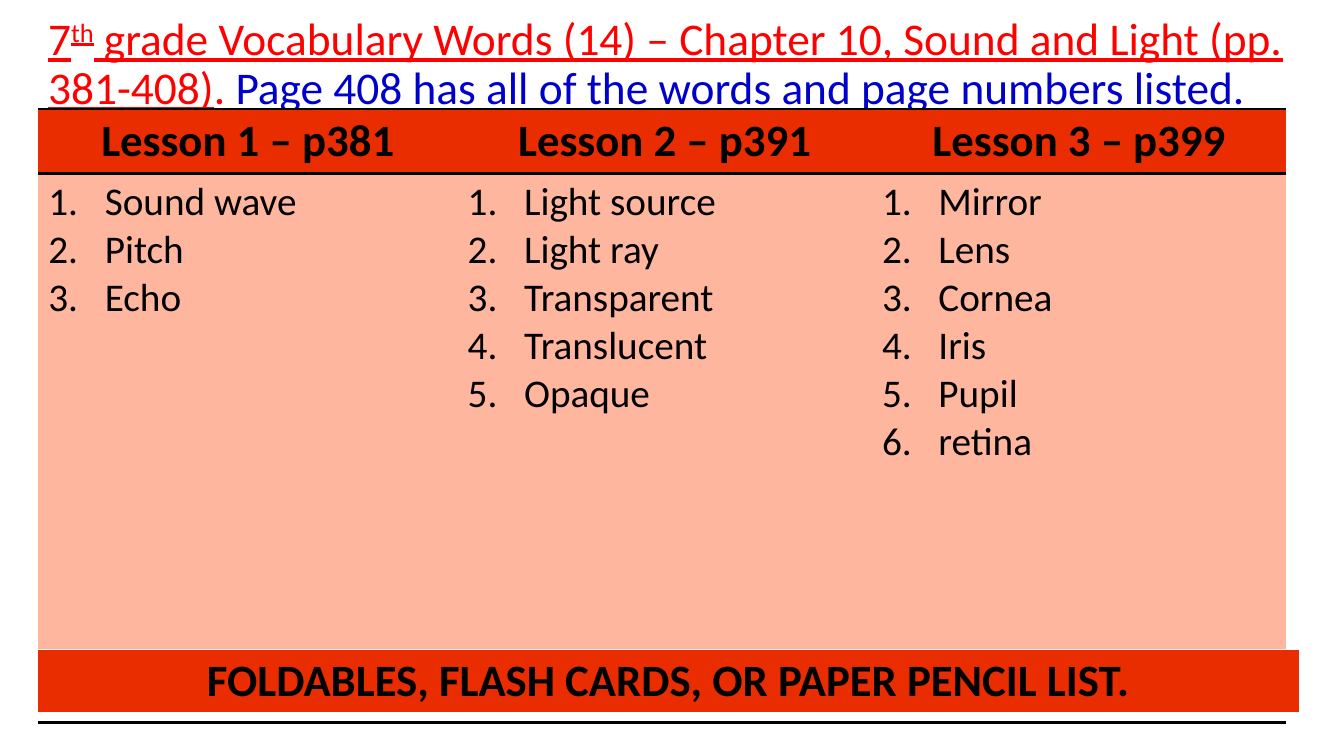
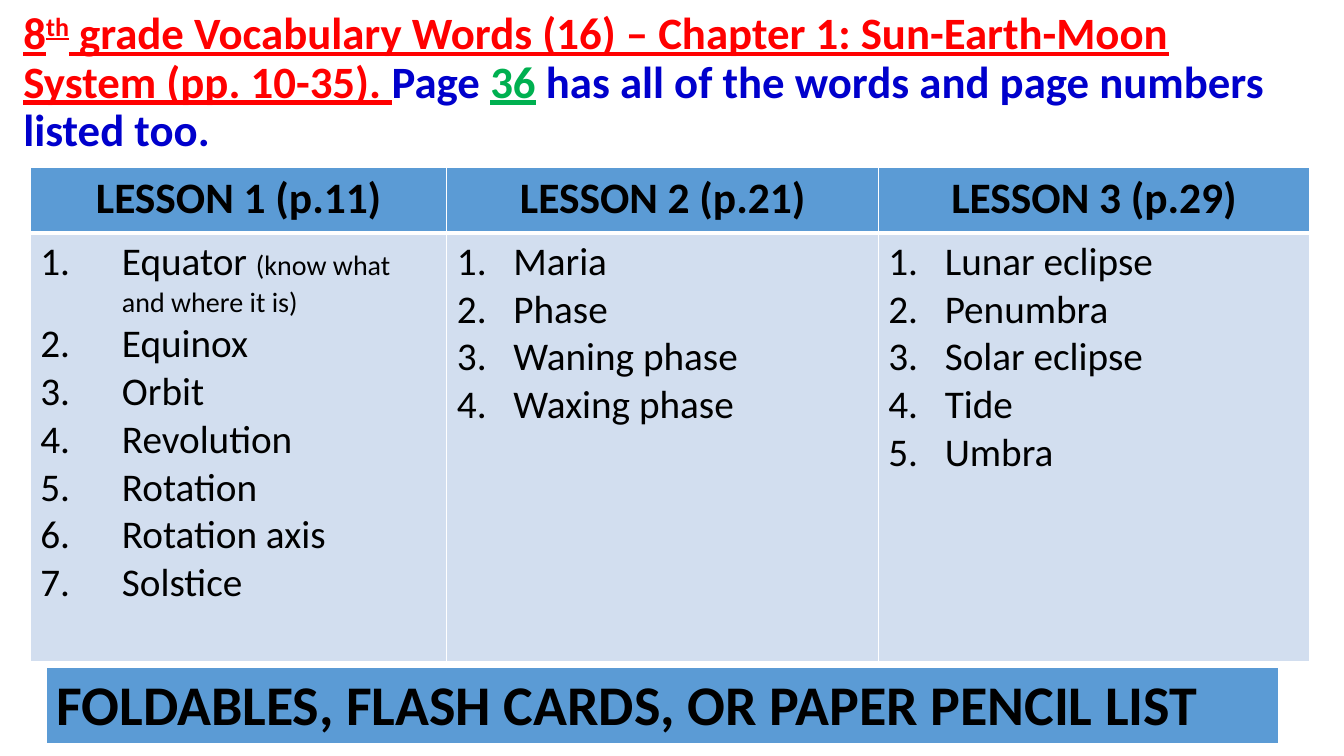
from dataclasses import dataclass

from lxml import etree
from pptx import Presentation
from pptx import util as u
from pptx.dml.color import RGBColor
from pptx.enum import text
from pptx.oxml import ns

WIDTH, HEIGHT = u.Inches(13.33), u.Inches(7.5)


@dataclass(frozen=True)
class Theme:
    font: str = "Calibri"
    ink: str = "000000"
    paper: str = "FFFFFF"
    heading: str = "FF0000"
    remark: str = "0000CC"
    page: str = "00B050"
    orange: str = "EA2D00"
    peach: str = "FFB69F"
    blue: str = "5B9BD5"
    pale_blue: str = "D2DEEF"
    word: float = 28
    hint: float = 20
    header: float = 32
    small_header: float = 31
    large_banner: float = 40
    hang: float = 0.56
    wide_hang: float = 0.81


T = Theme()
BLACK_RULE = (T.ink, 2)
THIN_WHITE = (T.paper, 1)
THICK_WHITE = (T.paper, 3)


def across(percent):
    return round(WIDTH * percent / 100)


def down(percent):
    return round(HEIGHT * percent / 100)


def add_run(p, words, size, color=T.ink, bold=False, underline=False, raised=False):
    r = p.add_run()
    r.text = words
    values = {"name": T.font, "size": u.Pt(size), "bold": bold, "underline": underline}
    for name, value in values.items():
        setattr(r.font, name, value)
    r.font.color.rgb = RGBColor.from_string(color)
    if raised:
        r._r.get_or_add_rPr().set("baseline", "30000")


def add_title(s, box, size, bold, runs):
    x, y, w, h = box
    sp = s.shapes.add_textbox(across(x), down(y), across(w), down(h))
    tf = sp.text_frame
    values = {"word_wrap": True, "vertical_anchor": text.MSO_ANCHOR.MIDDLE}
    for name, value in values.items():
        setattr(tf, name, value)
    p = tf.paragraphs[0]
    p.line_spacing = 0.9
    for words, style in runs:
        add_run(p, words, size, bold=bold, **style)


def set_border(cell, side, line):
    ln = etree.SubElement(cell._tc.get_or_add_tcPr(), ns.qn(f"a:ln{side}"))
    if line is None:
        etree.SubElement(ln, ns.qn("a:noFill"))
        return
    color, width = line
    ln.set("w", str(u.Pt(width)))
    fill = etree.SubElement(ln, ns.qn("a:solidFill"))
    etree.SubElement(fill, ns.qn("a:srgbClr"), val=color)


def add_table(s, corner, widths, heights, fills, rules, sides):
    x, y = corner
    frame = s.shapes.add_table(len(heights), len(widths), across(x), down(y),
                               across(sum(widths)), down(sum(heights)))
    table = frame.table
    table.first_row = table.horz_banding = False
    for column, width in zip(table.columns, widths):
        column.width = across(width)
    for i, (row, height) in enumerate(zip(table.rows, heights)):
        row.height = down(height)
        for cell in row.cells:
            borders = {"L": sides, "R": sides, "T": rules[i], "B": rules[i + 1]}
            for side, line in borders.items():
                set_border(cell, side, line)
            cell.fill.solid()
            cell.fill.fore_color.rgb = RGBColor.from_string(fills[i])
    return table


def write_heading(cell, words, size, align=text.PP_ALIGN.CENTER):
    p = cell.text_frame.paragraphs[0]
    p.alignment = align
    add_run(p, words, size, bold=True)


def write_words(cell, words, hang):
    tf = cell.text_frame
    for i, word in enumerate(words):
        p = tf.paragraphs[0] if i == 0 else tf.add_paragraph()
        pPr = p._p.get_or_add_pPr()
        pPr.set("marL", str(u.Inches(hang)))
        pPr.set("indent", str(-u.Inches(hang)))
        etree.SubElement(pPr, ns.qn("a:buFont"), typeface="+mj-lt")
        etree.SubElement(pPr, ns.qn("a:buAutoNum"), type="arabicPeriod")
        term, bracket, hint = word.partition("(")
        add_run(p, term, T.word)
        if hint:
            add_run(p, bracket + hint, T.hint)


def fill_lessons(table, size, lessons):
    for column, (heading, hang, words) in enumerate(lessons):
        write_heading(table.cell(0, column), heading, size)
        write_words(table.cell(1, column), words, hang)


def add_banner(s, box, fill, words, size, align):
    x, y, w, h = box
    table = add_table(s, (x, y), [w], [h], [fill], [THIN_WHITE, THICK_WHITE], THIN_WHITE)
    write_heading(table.cell(0, 0), words, size, align)


def add_seventh_grade(s):
    linked = {"color": T.heading, "underline": True}
    add_title(s, (2.85, 0, 93.85, 17.33), 32.4, False, [
        ("7", linked),
        ("th", {**linked, "raised": True}),
        (" grade Vocabulary Words (14) – Chapter 10, Sound and Light (pp. 381-408)", linked),
        (". ", {"color": T.heading}),
        ("Page 408 has all of the words and page numbers listed.", {"color": T.remark}),
    ])
    table = add_table(s, (2.85, 14.4), [31.2, 30.83, 30.83], [8.53, 64, 8.67],
                      [T.orange, T.peach, T.paper],
                      [BLACK_RULE, BLACK_RULE, None, BLACK_RULE], None)
    fill_lessons(table, T.header, [
        ("Lesson 1 – p381", T.hang, ["Sound wave", "Pitch", "Echo"]),
        ("Lesson 2 – p391", T.hang,
         ["Light source", "Light ray", "Transparent", "Translucent", "Opaque"]),
        ("Lesson 3 – p399", T.hang,
         ["Mirror", "Lens", "Cornea", "Iris", "Pupil", "retina"]),
    ])
    add_banner(s, (2.8, 85.87, 93.9, 8.53), T.orange,
               "FOLDABLES, FLASH CARDS, OR PAPER PENCIL LIST.",
               T.header, text.PP_ALIGN.CENTER)


def add_eighth_grade(s):
    linked = {"color": T.heading, "underline": True}
    add_title(s, (1, 0, 96.5, 22.13), T.header, True, [
        ("8", linked),
        ("th", {**linked, "raised": True}),
        (" grade Vocabulary Words (16) – Chapter 1: Sun-Earth-Moon System (pp. 10-35). ", linked),
        ("Page ", {"color": T.remark}),
        ("36", {"color": T.page, "underline": True}),
        (" has all of the words and page numbers listed too.", {"color": T.remark}),
    ])
    table = add_table(s, (2.25, 22.13), [31, 32.1, 32.1], [8.67, 56.67],
                      [T.blue, T.pale_blue],
                      [THIN_WHITE, THICK_WHITE, THIN_WHITE], THIN_WHITE)
    fill_lessons(table, T.small_header, [
        ("LESSON 1 (p.11)", T.wide_hang,
         ["Equator (know what and where it is)", "Equinox", "Orbit", "Revolution",
          "Rotation", "Rotation axis", "Solstice"]),
        ("LESSON 2 (p.21)", T.hang, ["Maria", "Phase", "Waning phase", "Waxing phase"]),
        ("LESSON 3 (p.29)", T.hang,
         ["Lunar eclipse", "Penumbra", "Solar eclipse", "Tide", "Umbra"]),
    ])
    add_banner(s, (3.45, 88.27, 91.7, 10.27), T.blue,
               "FOLDABLES, FLASH CARDS, OR PAPER PENCIL LIST",
               T.large_banner, text.PP_ALIGN.LEFT)


def main():
    prs = Presentation()
    prs.slide_width, prs.slide_height = WIDTH, HEIGHT
    for build in (add_seventh_grade, add_eighth_grade):
        build(prs.slides.add_slide(prs.slide_layouts[6]))
    prs.save("out.pptx")


if __name__ == "__main__":
    main()
